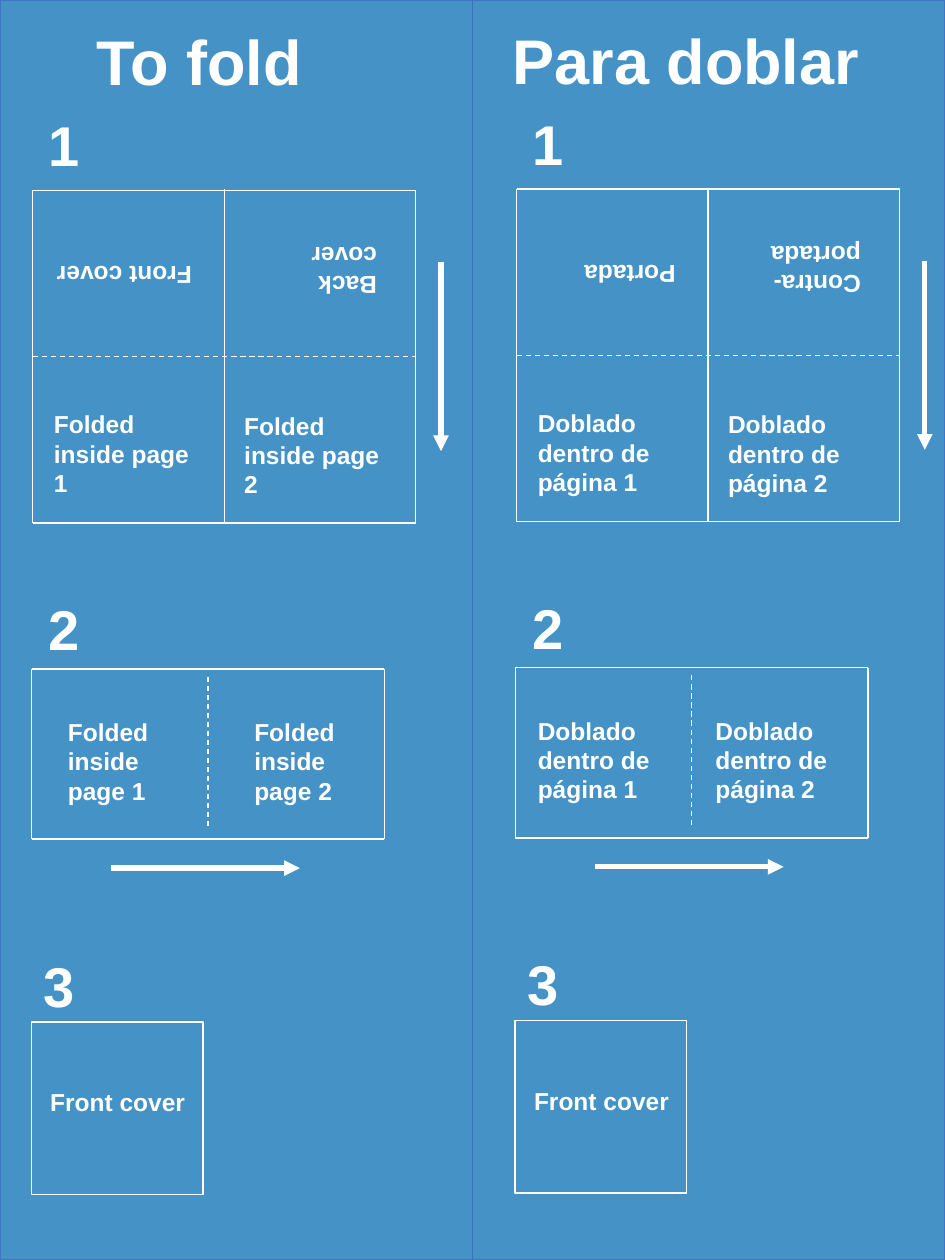
from lxml.etree import SubElement
from pptx import Presentation
from pptx.dml.color import RGBColor
from pptx.enum.dml import MSO_LINE
from pptx.enum.shapes import MSO_CONNECTOR, MSO_SHAPE
from pptx.oxml.ns import qn
from pptx.util import Inches, Pt

COLS, ROWS = 75, 100
HUES = {"page": "4492C6", "edge": "4472C4", "split": "3F6FC3", "ink": "FFFFFF"}


def write(frame, text, size=14, bold=True, font="Arial", hue="ink"):
    frame.word_wrap = True
    run = frame.paragraphs[0].add_run()
    run.text = text
    run.font.size = Pt(size)
    run.font.bold = bold
    run.font.name = font
    run.font.color.rgb = RGBColor.from_string(HUES[hue])


class Sheet:
    """Draws on one slide in grid columns and rows, counted from a panel's corner."""

    def __init__(self, deck):
        self.slide = deck.slides.add_slide(deck.slide_layouts[6])
        self.col = deck.slide_width / COLS
        self.row = deck.slide_height / ROWS
        self.shapes = self.slide.shapes
        self.left = self.top = 0

    def panel(self, left, top):
        self.shapes = self.slide.shapes.add_group_shape().shapes
        self.left, self.top = left, top

    def point(self, x, y):
        return round((x + self.left) * self.col), round((y + self.top) * self.row)

    def place(self, x, y, wide, high):
        return *self.point(x, y), round(wide * self.col), round(high * self.row)

    def box(self, x, y, wide, high, fill=None, line="ink"):
        shape = self.shapes.add_shape(MSO_SHAPE.RECTANGLE, *self.place(x, y, wide, high))
        shape.shadow.inherit = False
        if fill:
            shape.fill.solid()
            shape.fill.fore_color.rgb = RGBColor.from_string(HUES[fill])
        else:
            shape.fill.background()
        shape.line.color.rgb = RGBColor.from_string(HUES[line])
        shape.line.width = Pt(1)

    def text(self, text, x, y, wide, high, turn=0, **style):
        shape = self.shapes.add_textbox(*self.place(x, y, wide, high))
        shape.rotation = turn
        write(shape.text_frame, text, **style)

    def line(self, x, y, to_x, to_y, width=0.75, hue="ink", dash=False, arrow=False):
        ends = *self.point(x, y), *self.point(to_x, to_y)
        line = self.shapes.add_connector(MSO_CONNECTOR.STRAIGHT, *ends)
        line.line.color.rgb = RGBColor.from_string(HUES[hue])
        line.line.width = Pt(width)
        if dash:
            line.line.dash_style = MSO_LINE.DASH
        if arrow:
            SubElement(line.line._get_or_add_ln(), qn("a:tailEnd"), type="triangle")
        SubElement(line._element.spPr, qn("a:effectLst"))

    def frame(self, x, y, right, base):
        self.line(x, y, right, y)
        self.line(x, base, right, base)
        self.line(x, y, x, base)
        self.line(right, y, right, base)


def guide(sheet, title, front, back, inside, halves):
    sheet.text(title[0], *title[1:], 7.1, size=36)
    for step, (x, y) in enumerate([(2.9, 8.3), (2.9, 46.7), (2.5, 75)], 1):
        sheet.text(str(step), x, y, 7.1, 6.4, size=32)

    sheet.frame(2.6, 15.1, 33, 41.5)
    sheet.line(2.6, 28.3, 33, 28.3, dash=True)
    sheet.line(17.8, 15, 17.8, 41.5)
    sheet.text(front, 2.5, 20.2, 13.7, 3.4, turn=180)
    sheet.text(back, 18.8, 18.7, 12.1, 5.7, turn=180)
    sheet.line(35, 20.8, 35, 35.8, width=3, arrow=True)

    sheet.frame(2.5, 53.1, 30.5, 66.6)
    sheet.line(16.5, 53.7, 16.5, 65.6, dash=True)
    sheet.line(8.8, 68.9, 23.8, 68.9, width=3, arrow=True)

    spots = [(3.3, 32), (18.4, 32.1)]
    for page, ((x, y), (half, wide)) in enumerate(zip(spots, halves), 1):
        sheet.text(f"{inside} {page}", x, y, 13.6, 8.1)
        sheet.text(f"{inside} {page}", half, 56.4, wide, 8.1)

    sheet.box(2.5, 81.1, 13.6, 13.7)
    sheet.text("Front cover", 3, 85.8, 13.7, 3.4)


def main():
    deck = Presentation()
    deck.slide_width, deck.slide_height = Inches(7.5), Inches(10)
    sheet = Sheet(deck)
    sheet.box(0, 0, COLS, ROWS, fill="page", line="edge")
    sheet.line(COLS / 2, 0, COLS / 2, ROWS, hue="split")

    sheet.panel(0, 0)
    guide(sheet, ("To fold", 6.7, 1.3, 23.3), "Front cover", "Back cover",
          "Folded inside page", [(4.4, 10.8), (19.2, 9.6)])
    sheet.panel(38.4, -0.1)
    guide(sheet, ("Para doblar", 1.3, 1.3, 31.9), "Portada", "Contra-portada",
          "Doblado dentro de página", [(3.3, 11.3), (17.4, 11.4)])
    deck.save("out.pptx")


if __name__ == "__main__":
    main()
